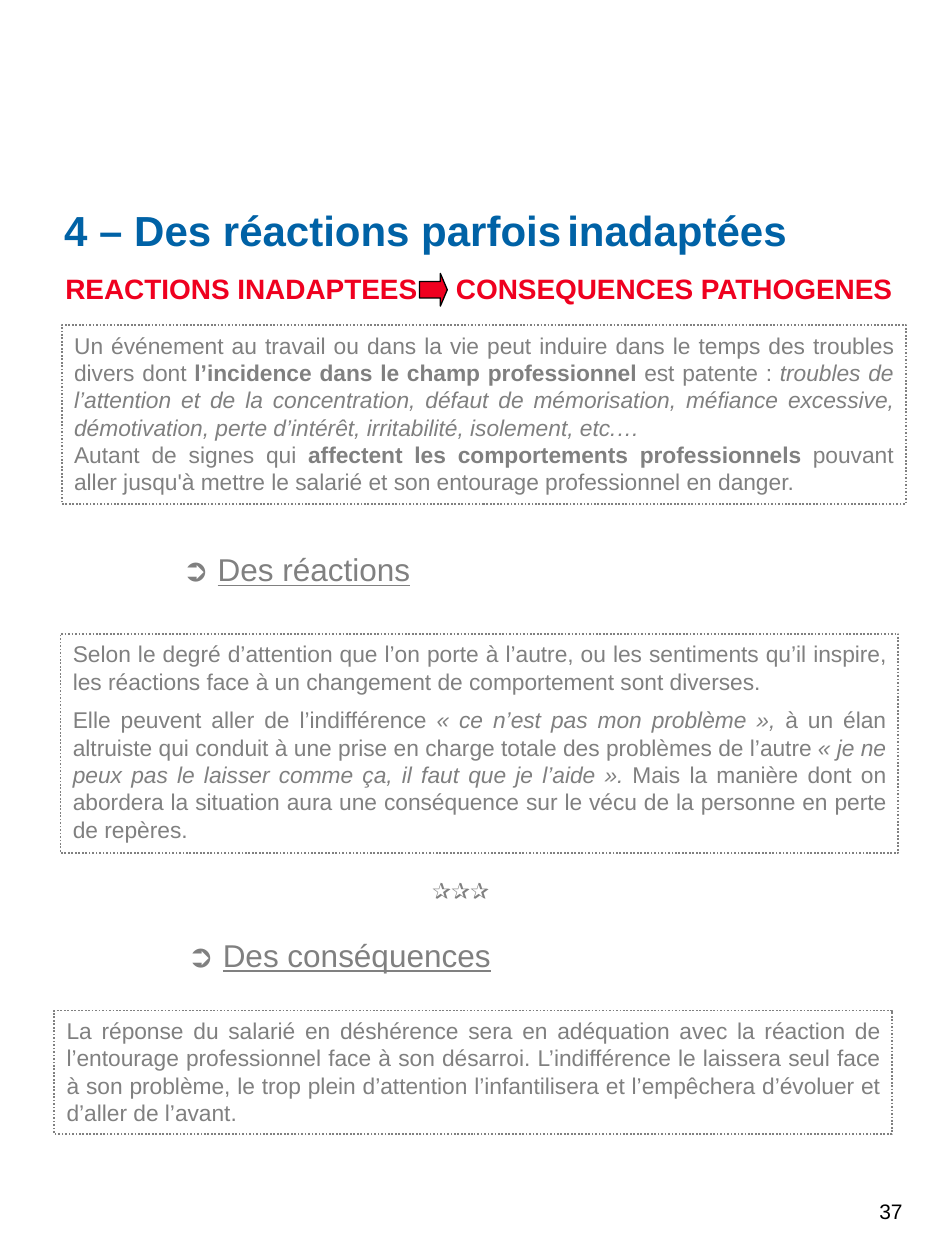
from dataclasses import dataclass

from lxml.etree import SubElement
from pptx import Presentation
from pptx.dml.color import RGBColor as Rgb
from pptx.enum.dml import MSO_LINE as Dash
from pptx.enum.shapes import MSO_SHAPE as Preset
from pptx.enum.text import MSO_ANCHOR as Anchor, MSO_AUTO_SIZE as AutoSize, PP_ALIGN as Align
from pptx.oxml.ns import qn
from pptx.util import Emu, Pt


@dataclass(frozen=True)
class Theme:
    font: str = "Arial"
    blue: str = "0062A6"
    red: str = "EF001F"
    grey: str = "808080"
    black: str = "000000"
    title: int = 24
    banner: int = 16
    heading: int = 18
    body: int = 13
    small: int = 12
    paragraph_gap: float = 6.5


THEME = Theme()
EMU_PER_PX = 9144
BOLD = {"bold": True}
ITALIC = {"italic": True}
UNDERLINED = {"underline": True}

EVENT = [
    [
        ("Un événement au travail ou dans la vie peut induire dans le temps des troubles divers dont ", {}),
        ("l’incidence dans le champ professionnel", BOLD),
        (" est patente : ", {}),
        ("troubles de l’attention et de la concentration, défaut de mémorisation, méfiance excessive, "
         "démotivation, perte d’intérêt, irritabilité, isolement, etc.…", ITALIC),
    ],
    [
        ("Autant de signes qui ", {}),
        ("affectent les comportements professionnels", BOLD),
        (" pouvant aller jusqu'à mettre le salarié et son entourage professionnel en danger.", {}),
    ],
]
REACTIONS = [
    [
        ("Selon le degré d’attention que l’on porte à l’autre, ou les sentiments qu’il inspire, "
         "les réactions face à un changement de comportement sont diverses.", {}),
    ],
    [
        ("Elle peuvent aller de l’indifférence ", {}),
        ("« ce n’est pas mon problème », ", ITALIC),
        ("à un élan altruiste qui conduit à une prise en charge totale des problèmes de l’autre ", {}),
        ("« je ne peux pas le laisser comme ça, il faut que je l’aide ». ", ITALIC),
        ("Mais la manière dont on abordera la situation aura une conséquence sur le vécu "
         "de la personne en perte de repères.", {}),
    ],
]
CONSEQUENCES = [
    [
        ("La réponse du salarié en déshérence sera en adéquation avec la réaction de l’entourage "
         "professionnel face à son désarroi. L’indifférence le laissera seul face à son problème, "
         "le trop plein d’attention l’infantilisera et l’empêchera d’évoluer et d’aller de l’avant.", {}),
    ],
]


def px(length):
    return Emu(length * EMU_PER_PX)


def apply(target, formats):
    for name, value in formats.items():
        setattr(target, name, value)


def write(frame, paragraphs, size, color, align=Align.LEFT, gap=0):
    apply(frame, {
        "word_wrap": True, "auto_size": AutoSize.NONE, "vertical_anchor": Anchor.TOP,
        "margin_left": px(10), "margin_right": px(10), "margin_top": px(5), "margin_bottom": px(5),
    })
    for index, runs in enumerate(paragraphs):
        paragraph = frame.add_paragraph() if index else frame.paragraphs[0]
        apply(paragraph, {"alignment": align, "space_before": Pt(gap if index else 0)})
        for words, formats in runs:
            run = paragraph.add_run()
            run.text = words
            apply(run.font, {"name": THEME.font, "size": Pt(size), "bold": False, **formats})
            run.font.color.rgb = Rgb.from_string(color)


def add_text(slide, box, paragraphs, size, color, align=Align.LEFT):
    frame = slide.shapes.add_textbox(*map(px, box)).text_frame
    write(frame, paragraphs, size, color, align)
    return frame.paragraphs[0]


def add_title(slide, box):
    title = slide.shapes.title
    apply(title, dict(zip(("left", "top", "width", "height"), map(px, box))))
    words = [("4 – Des réactions parfois", BOLD), (" ", {**BOLD, "size": Pt(THEME.small)}), ("inadaptées", BOLD)]
    write(title.text_frame, [words], THEME.title, THEME.blue, Align.JUSTIFY)


def add_banner(slide, box):
    left, top, _, _ = box
    words = [("REACTIONS INADAPTEES\tCONSEQUENCES PATHOGENES", BOLD)]
    line = add_text(slide, box, [words], THEME.banner, THEME.red)
    tabs = SubElement(line._p.get_or_add_pPr(), qn("a:tabLst"))
    SubElement(tabs, qn("a:tab"), pos=str(px(310)), algn="l")
    arrow = slide.shapes.add_shape(Preset.RIGHT_ARROW, *map(px, (left + 291, top + 6, 22, 26)))
    arrow.adjustments[0], arrow.adjustments[1] = 0.5, 0.25
    arrow.shadow.inherit = False
    arrow.fill.solid()
    arrow.fill.fore_color.rgb = Rgb.from_string(THEME.red)
    arrow.line.color.rgb = Rgb.from_string(THEME.black)
    arrow.line.width = Pt(0.75)


def add_heading(slide, box, words):
    line = add_text(slide, box, [[("➲ ", {}), (words, UNDERLINED)]], THEME.heading, THEME.grey)
    line._p.get_or_add_pPr().set("marL", str(px(100)))


def add_panel(slide, box, paragraphs, gap=0):
    panel = slide.shapes.add_shape(Preset.RECTANGLE, *map(px, box))
    panel.shadow.inherit = False
    panel.fill.background()
    panel.line.color.rgb = Rgb.from_string(THEME.grey)
    apply(panel.line, {"width": Pt(1), "dash_style": Dash.ROUND_DOT})
    write(panel.text_frame, paragraphs, THEME.body, THEME.grey, Align.JUSTIFY, gap)


def main():
    deck = Presentation()
    apply(deck, {"slide_width": px(750), "slide_height": px(1000)})
    slide = deck.slides.add_slide(deck.slide_layouts.get_by_name("Title Only"))
    add_title(slide, (41, 157, 696, 83))
    add_banner(slide, (42, 211, 681, 37))
    add_panel(slide, (49, 258, 670, 142), EVENT)
    add_heading(slide, (35, 432, 665, 40), "Des réactions")
    add_panel(slide, (48, 503, 665, 174), REACTIONS, THEME.paragraph_gap)
    add_text(slide, (35, 691, 661, 32), [[("✰✰✰", BOLD)]], THEME.body, THEME.grey, Align.CENTER)
    add_heading(slide, (39, 738, 658, 40), "Des conséquences")
    add_panel(slide, (43, 802, 665, 98), CONSEQUENCES)
    add_text(slide, (688, 946, 62, 54), [[("37", {})]], THEME.small, THEME.black)
    deck.save("out.pptx")


if __name__ == "__main__":
    main()
